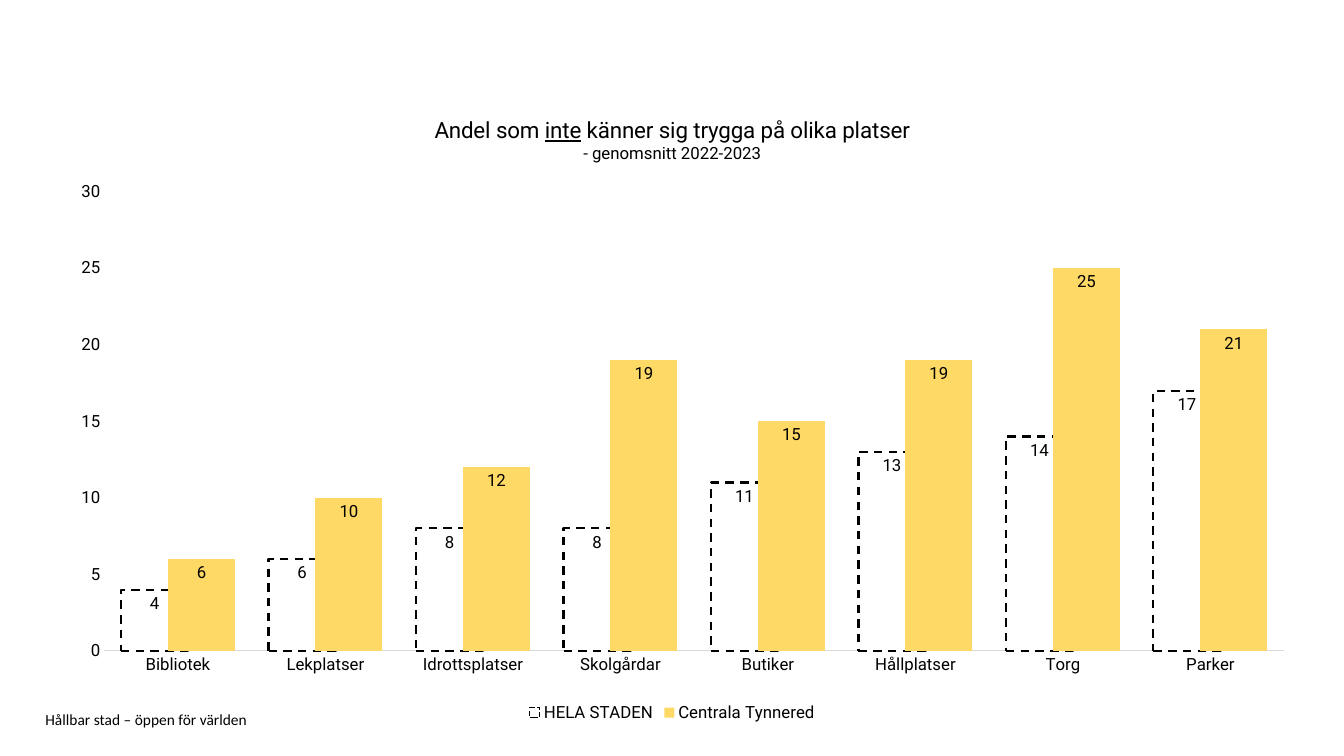
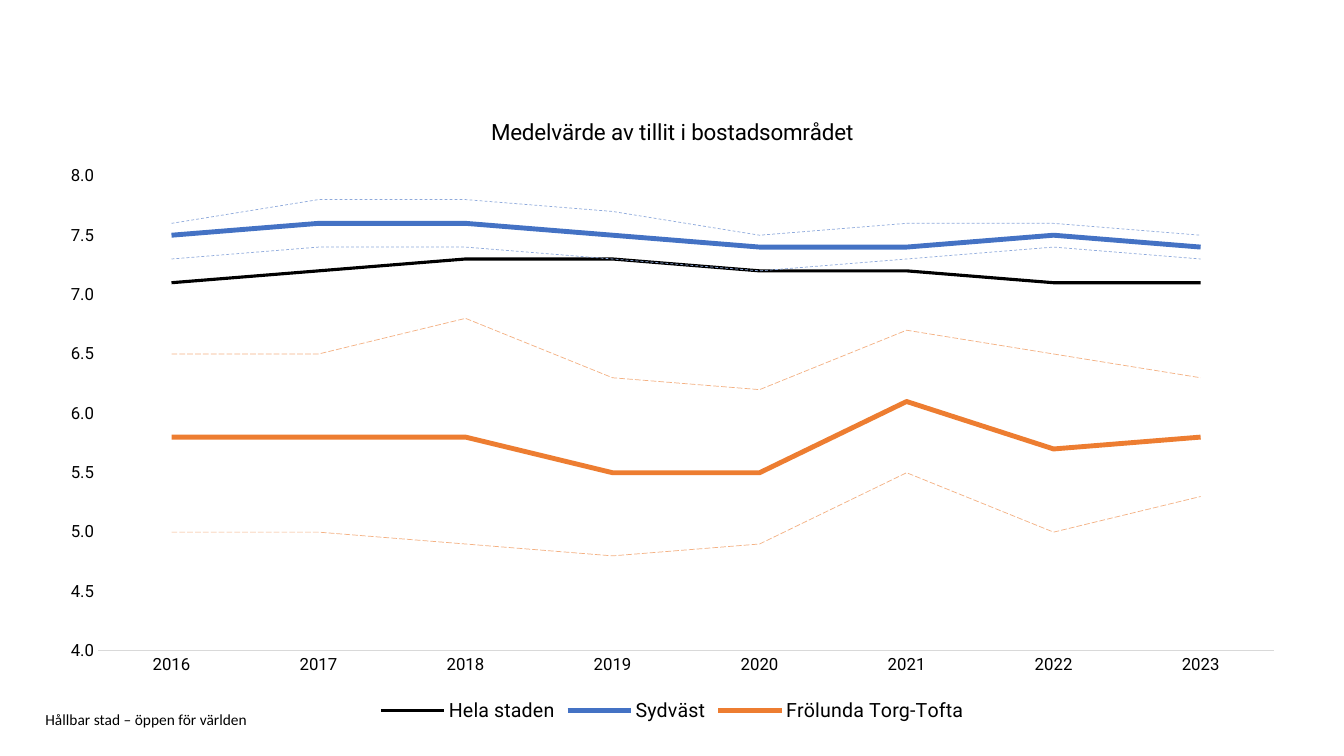
from lxml import etree
from pptx import Presentation
from pptx.chart.data import CategoryChartData
from pptx.dml.color import RGBColor
from pptx.enum.chart import XL_CHART_TYPE, XL_LABEL_POSITION, XL_LEGEND_POSITION, XL_TICK_MARK
from pptx.enum.dml import MSO_LINE
from pptx.enum.text import MSO_ANCHOR
from pptx.oxml.ns import qn
from pptx.util import Pt

COLUMNS, LINES = XL_CHART_TYPE.COLUMN_CLUSTERED, XL_CHART_TYPE.LINE
INSIDE_END = XL_LABEL_POSITION.INSIDE_END
BOTTOM = XL_LEGEND_POSITION.BOTTOM
NO_TICK = XL_TICK_MARK.NONE
MIDDLE = MSO_ANCHOR.MIDDLE
DASH, LONG_DASH = MSO_LINE.DASH, MSO_LINE.LONG_DASH

BLACK, WHITE, AXIS_GRAY, YELLOW = "000000", "FFFFFF", "D9D9D9", "FFD966"
BLUE, LIGHT_BLUE, ORANGE, LIGHT_ORANGE = "4472C4", "8FAADC", "ED7D31", "F4B183"
CHART_FONT, FOOTER_FONT = "Roboto", "Calibri"
FOOTER = "Hållbar stad – öppen för världen"
FOOTER_BOX = (32.4, 508.3, 680.4, 11.5)
CHART_BOX = (32.4, 68.4, 895.7, 450.7)

SAFETY = {
    "type": COLUMNS,
    "title": [
        [("Andel som ", 16, False), ("inte", 16, True),
         (" känner sig trygga på olika platser", 16, False)],
        [("- genomsnitt 2022-2023", 12, False)],
    ],
    "categories": ["Bibliotek", "Lekplatser", "Idrottsplatser", "Skolgårdar",
                   "Butiker", "Hållplatser", "Torg", "Parker"],
    "series": [
        ("HELA STADEN", [4, 6, 8, 8, 11, 13, 14, 17], WHITE, (BLACK, 1.5, DASH)),
        ("Centrala Tynnered", [6, 10, 12, 19, 15, 19, 25, 21], YELLOW, None),
    ],
    "scale": (0, 30, 5),
    "format": "0",
    "plot": (0.047, 0.152, 0.941, 0.728),
    "legend_size": 12,
    "legend_hides": [],
}
TRUST = {
    "type": LINES,
    "title": [[("Medelvärde av tillit i bostadsområdet", 16, False)]],
    "categories": [str(year) for year in range(2016, 2024)],
    "series": [
        ("Hela staden", [7.1, 7.2, 7.3, 7.3, 7.2, 7.2, 7.1, 7.1], None, (BLACK, 2.25, None)),
        ("Sydväst", [7.5, 7.6, 7.6, 7.5, 7.4, 7.4, 7.5, 7.4], None, (BLUE, 3.5, None)),
        ("Series 3", [7.3, 7.4, 7.4, 7.3, 7.2, 7.3, 7.4, 7.3], None, (LIGHT_BLUE, 0.5, DASH)),
        ("Series 4", [7.6, 7.8, 7.8, 7.7, 7.5, 7.6, 7.6, 7.5], None, (LIGHT_BLUE, 0.5, DASH)),
        ("Frölunda Torg-Tofta", [5.8, 5.8, 5.8, 5.5, 5.5, 6.1, 5.7, 5.8], None,
         (ORANGE, 3.5, None)),
        ("Series 6", [5, 5, 4.9, 4.8, 4.9, 5.5, 5, 5.3], None, (LIGHT_ORANGE, 0.5, LONG_DASH)),
        ("Series 7", [6.5, 6.5, 6.8, 6.3, 6.2, 6.7, 6.5, 6.3], None,
         (LIGHT_ORANGE, 0.5, LONG_DASH)),
    ],
    "scale": (4, 8, 0.5),
    "format": "0.0",
    "plot": (0.042, 0.127, 0.938, 0.753),
    "legend_size": 14,
    "legend_hides": [2, 3, 5, 6],
}


def color(value):
    return RGBColor.from_string(value)


def points(box):
    return [Pt(length) for length in box]


def set_font(font, name, size):
    font.name, font.size, font.bold = name, Pt(size), False
    font.color.rgb = color(BLACK)


def set_line(line, line_color, width, dash=None):
    line.color.rgb = color(line_color)
    line.width = Pt(width)
    if dash is not None:
        line.dash_style = dash


def add_footer(slide):
    frame = slide.shapes.add_textbox(*points(FOOTER_BOX)).text_frame
    frame.word_wrap = True
    frame.vertical_anchor = MIDDLE
    frame.margin_left = frame.margin_top = frame.margin_right = frame.margin_bottom = 0
    frame.text = FOOTER
    set_font(frame.paragraphs[0].font, FOOTER_FONT, 11)


def set_title(chart, lines):
    chart.has_title = True
    chart.chart_title.include_in_layout = False
    frame = chart.chart_title.text_frame
    for index, pieces in enumerate(lines):
        paragraph = frame.add_paragraph() if index else frame.paragraphs[0]
        for text, size, underline in pieces:
            run = paragraph.add_run()
            run.text = text
            set_font(run.font, CHART_FONT, size)
            run.font.underline = underline


def set_axes(chart, scale, number_format):
    category_axis, value_axis = chart.category_axis, chart.value_axis
    for axis in (category_axis, value_axis):
        axis.major_tick_mark = axis.minor_tick_mark = NO_TICK
        axis.has_major_gridlines = False
    set_line(category_axis.format.line, AXIS_GRAY, 0.75)
    value_axis.format.line.fill.background()
    value_axis.minimum_scale, value_axis.maximum_scale, value_axis.major_unit = scale
    value_axis.tick_labels.number_format = number_format
    value_axis.tick_labels.number_format_is_linked = False


def set_legend(chart, size, hidden):
    chart.has_legend = True
    legend = chart.legend
    legend.position = BOTTOM
    legend.include_in_layout = False
    set_font(legend.font, CHART_FONT, size)
    for place, index in enumerate(hidden, start=1):
        entry = etree.Element(qn("c:legendEntry"))
        etree.SubElement(entry, qn("c:idx")).set("val", str(index))
        etree.SubElement(entry, qn("c:delete")).set("val", "1")
        legend._element.insert(place, entry)


def set_plot_area(chart, box):
    plot_area = chart._chartSpace.chart.plotArea
    for layout in plot_area.findall(qn("c:layout")):
        plot_area.remove(layout)
    layout = etree.Element(qn("c:layout"))
    manual = etree.SubElement(layout, qn("c:manualLayout"))
    settings = [("layoutTarget", "inner"), ("xMode", "edge"), ("yMode", "edge")]
    for name, value in settings + list(zip("xywh", box)):
        etree.SubElement(manual, qn(f"c:{name}")).set("val", str(value))
    plot_area.insert(0, layout)


def set_series(chart, content):
    plot = chart.plots[0]
    plot.vary_by_categories = False
    is_columns = content["type"] == COLUMNS
    if is_columns:
        plot.gap_width, plot.overlap = 50, 30
        plot.has_data_labels = True
        labels = plot.data_labels
        labels.show_value = True
        labels.position = INSIDE_END
        labels.number_format, labels.number_format_is_linked = content["format"], False
        set_font(labels.font, CHART_FONT, 12)
    for series, (_, _, fill, line) in zip(plot.series, content["series"]):
        if is_columns:
            series.format.fill.solid()
            series.format.fill.fore_color.rgb = color(fill)
        else:
            series.smooth = False
        if line:
            set_line(series.format.line, *line)


def add_chart(slide, content):
    data = CategoryChartData(number_format=content["format"])
    data.categories = content["categories"]
    for name, values, _, _ in content["series"]:
        data.add_series(name, values)
    chart = slide.shapes.add_chart(content["type"], *points(CHART_BOX), data).chart
    set_font(chart.font, CHART_FONT, 12)
    set_title(chart, content["title"])
    set_axes(chart, content["scale"], content["format"])
    set_legend(chart, content["legend_size"], content["legend_hides"])
    set_plot_area(chart, content["plot"])
    set_series(chart, content)


def main():
    """Build the two survey chart slides."""
    presentation = Presentation()
    presentation.slide_width, presentation.slide_height = Pt(960), Pt(540)
    for content in (SAFETY, TRUST):
        slide = presentation.slides.add_slide(presentation.slide_layouts[6])
        add_footer(slide)
        add_chart(slide, content)
    presentation.save("out.pptx")


if __name__ == "__main__":
    main()
